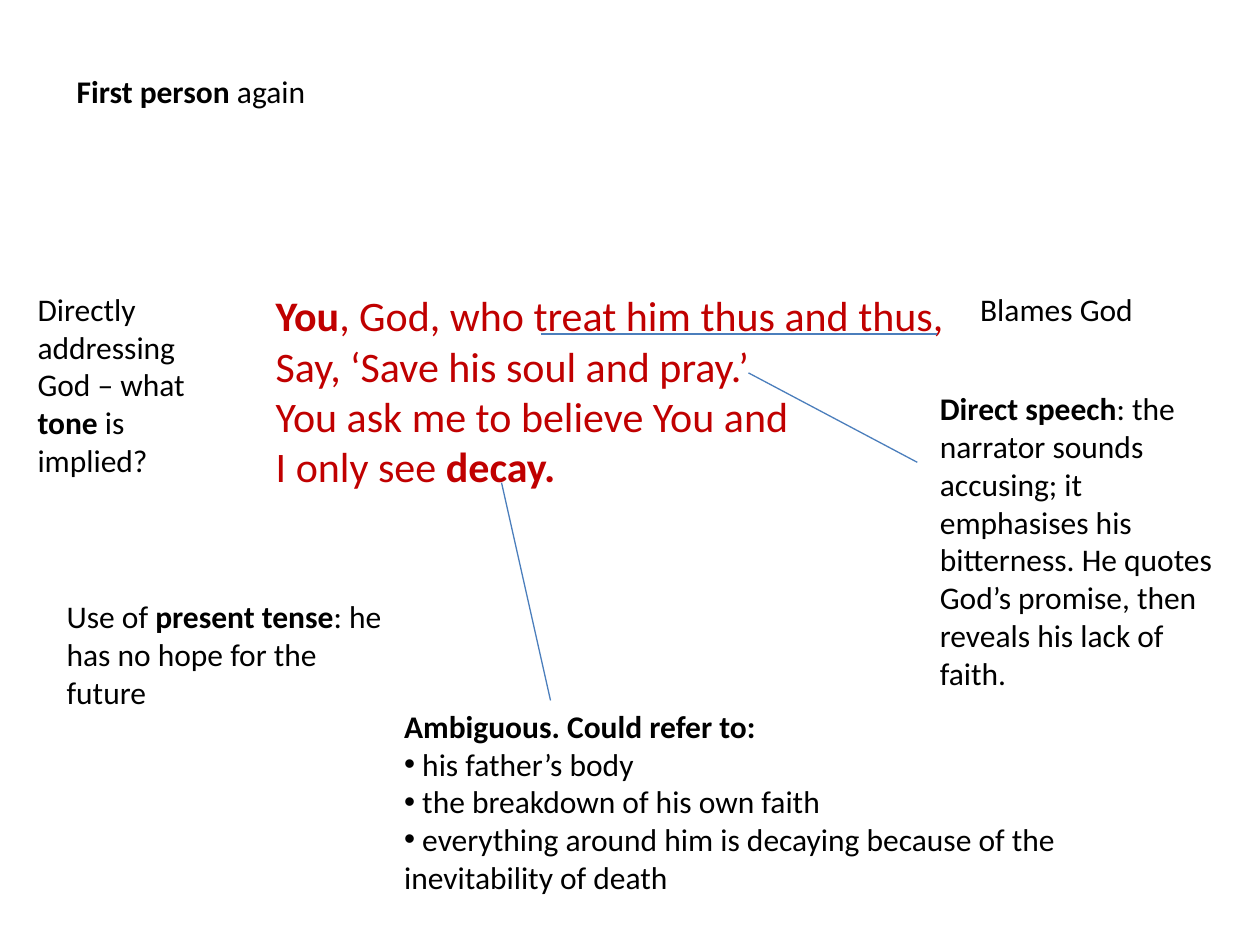
"""Build a slide of annotations around a stanza about God and decay."""
from dataclasses import dataclass

from lxml.etree import SubElement
from pptx import Presentation
from pptx.dml.color import RGBColor
from pptx.enum.shapes import MSO_CONNECTOR as Conn
from pptx.enum.text import MSO_ANCHOR as Anchor
from pptx.enum.text import MSO_AUTO_SIZE as AutoSize
from pptx.oxml.ns import qn
from pptx.slide import Slide
from pptx.util import Pt

BLACK, RED, BLUE = "000000", "C00000", "4B7EBC"
BULLET = "•"


@dataclass(frozen=True)
class Note:
    """A text box; asterisks in a line enclose bold words."""
    left: float
    top: float
    width: float
    height: float
    lines: tuple[str, ...]
    wrap: bool = True
    size: float = 18
    color: str = BLACK


@dataclass(frozen=True)
class Line:
    """A straight line between two points."""
    x1: float
    y1: float
    x2: float
    y2: float


ITEMS: list[Note | Line] = [
    Note(150.5, 162, 404, 145.4, (
        "*You*, God, who treat him thus and thus,",
        "Say, ‘Save his soul and pray.’",
        "You ask me to believe You and",
        "I only see *decay.*",
    ), wrap=False, size=24, color=RED),
    Note(36.7, 37.4, 146, 29, ("*First person* again",), wrap=False),
    Note(14.4, 162, 108, 116.6,
         ("Directly addressing God – what *tone *is implied?",)),
    Line(309, 190.8, 535.7, 190.8),
    Note(553, 162, 103, 29, ("Blames God",), wrap=False),
    Note(31, 337.7, 198.7, 72.7,
         ("Use of *present tense*: he has no hope for the future",)),
    Line(427.7, 213.1, 524.2, 264.2),
    Note(530, 218.9, 181.4, 181.4, (
        "*Direct speech*: the narrator sounds accusing; it emphasises his "
        "bitterness. He quotes God’s promise, then reveals his lack of faith.",
    )),
    Line(286.6, 275.8, 314.6, 400.3),
    Note(223.9, 400.3, 470.9, 116.6, (
        "*Ambiguous. Could refer to:*",
        BULLET + " his father’s body",
        BULLET + " the breakdown of his own faith",
        BULLET + " everything around him is decaying because of the "
        "inevitability of death",
    )),
]


def rgb(color: str) -> RGBColor:
    """Turn a hex string into a colour."""
    return RGBColor.from_string(color)


def add_bullet(p) -> None:
    """Give a paragraph a bullet without a hanging indent."""
    ppr = p._p.get_or_add_pPr()
    SubElement(ppr, qn("a:buFont"), typeface="Arial")
    SubElement(ppr, qn("a:buChar"), char=BULLET)


def draw_note(s: Slide, note: Note) -> None:
    """Draw a text box with its paragraphs."""
    sp = s.shapes.add_textbox(
        Pt(note.left), Pt(note.top), Pt(note.width), Pt(note.height))
    tf = sp.text_frame
    frame = {"word_wrap": note.wrap, "auto_size": AutoSize.NONE,
             "vertical_anchor": Anchor.TOP}
    for name, value in frame.items():
        setattr(tf, name, value)
    for i, line in enumerate(note.lines):
        p = tf.add_paragraph() if i else tf.paragraphs[0]
        if line.startswith(BULLET):
            add_bullet(p)
        for j, text in enumerate(line.removeprefix(BULLET).split("*")):
            if not text:
                continue
            r = p.add_run()
            r.text = text
            font = {"name": "Calibri", "size": Pt(note.size), "bold": j % 2 == 1}
            for name, value in font.items():
                setattr(r.font, name, value)
            r.font.color.rgb = rgb(note.color)


def draw_line(s: Slide, line: Line) -> None:
    """Draw a thin straight line without a shadow."""
    sp = s.shapes.add_connector(
        Conn.STRAIGHT, Pt(line.x1), Pt(line.y1), Pt(line.x2), Pt(line.y2))
    sp.line.color.rgb = rgb(BLUE)
    sp.line.width = Pt(0.75)
    SubElement(sp._element.spPr, qn("a:effectLst"))


def main() -> None:
    """Build and save the slide."""
    prs = Presentation()
    prs.slide_width, prs.slide_height = Pt(720), Pt(540)
    s = prs.slides.add_slide(prs.slide_layouts[6])
    for item in ITEMS:
        if isinstance(item, Note):
            draw_note(s, item)
        else:
            draw_line(s, item)
    prs.save("out.pptx")


if __name__ == "__main__":
    main()
